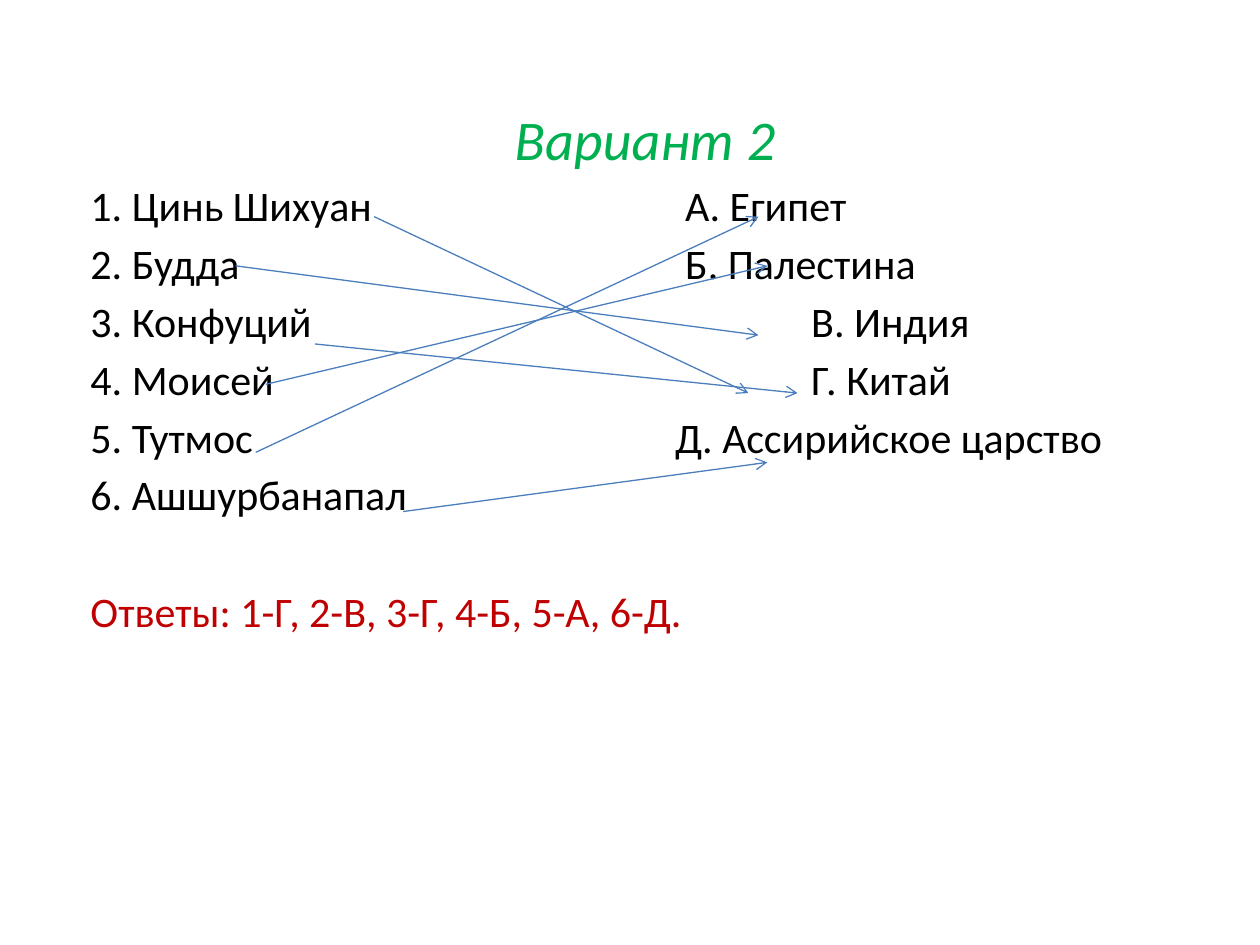
import pptx
import pptx.util
import pptx.dml.color
import pptx.enum.shapes
import pptx.enum.text
import pptx.oxml.ns
import lxml.etree

Inches = pptx.util.Inches
Pt = pptx.util.Pt
qn = pptx.oxml.ns.qn


def color(code):
    return pptx.dml.color.RGBColor.from_string(code)


def add_line(frame, text, size, code, gap):
    first = frame.paragraphs[0]
    para = frame.add_paragraph() if first.runs else first
    para.space_before = Pt(gap)
    run = para.add_run()
    run.text = text
    run.font.name = "Calibri"
    run.font.size = Pt(size)
    run.font.color.rgb = color(code)
    return para


deck = pptx.Presentation()
deck.slide_width = Inches(10)
deck.slide_height = Inches(7.5)
slide = deck.slides.add_slide(deck.slide_layouts[6])

# Title and the two columns to match
box = slide.shapes.add_textbox(Inches(0.62), Inches(0.78), Inches(9), Inches(4.95))
frame = box.text_frame
frame.word_wrap = True

title = add_line(frame, "Вариант 2", 32, "00B050", 4.3)
title.alignment = pptx.enum.text.PP_ALIGN.CENTER
title.runs[0].font.italic = True

# Name, place, tab position of the place
rows = [
    ("1. Цинь Шихуан", "А. Египет", 4.72),
    ("2. Будда", "Б. Палестина", 4.72),
    ("3. Конфуций", "В. Индия", 5.72),
    ("4. Моисей", "Г. Китай", 5.72),
    ("5. Тутмос", "Д. Ассирийское царство", 4.64),
]
for name, place, stop in rows:
    para = add_line(frame, name + "\t" + place, 24, "000000", 4.3)
    props = para._p.get_or_add_pPr()
    tabs = lxml.etree.SubElement(props, qn("a:tabLst"))
    lxml.etree.SubElement(tabs, qn("a:tab"), pos=str(Inches(stop)), algn="l")
add_line(frame, "6. Ашшурбанапал", 24, "000000", 4.3)

# Answers, one line further down
add_line(frame, "Ответы: 1-Г, 2-В, 3-Г, 4-Б, 5-А, 6-Д.", 24, "C00000", 37.9)

# Arrows from names to places
arrows = [
    (2.97, 1.72, 5.94, 3.12),
    (1.87, 2.11, 6.02, 2.66),
    (2.5, 2.73, 6.33, 3.12),
    (2.11, 3.05, 6.09, 2.11),
    (2.03, 3.59, 6.02, 1.72),
    (3.2, 4.06, 6.09, 3.67),
]
for ends in arrows:
    arrow = slide.shapes.add_connector(
        pptx.enum.shapes.MSO_CONNECTOR.STRAIGHT, *map(Inches, ends))
    arrow.line.color.rgb = color("4B7EBC")
    arrow.line.width = Pt(0.75)
    lxml.etree.SubElement(arrow.line._get_or_add_ln(), qn("a:tailEnd"), type="arrow")
    lxml.etree.SubElement(arrow._element.spPr, qn("a:effectLst"))

deck.save("out.pptx")
